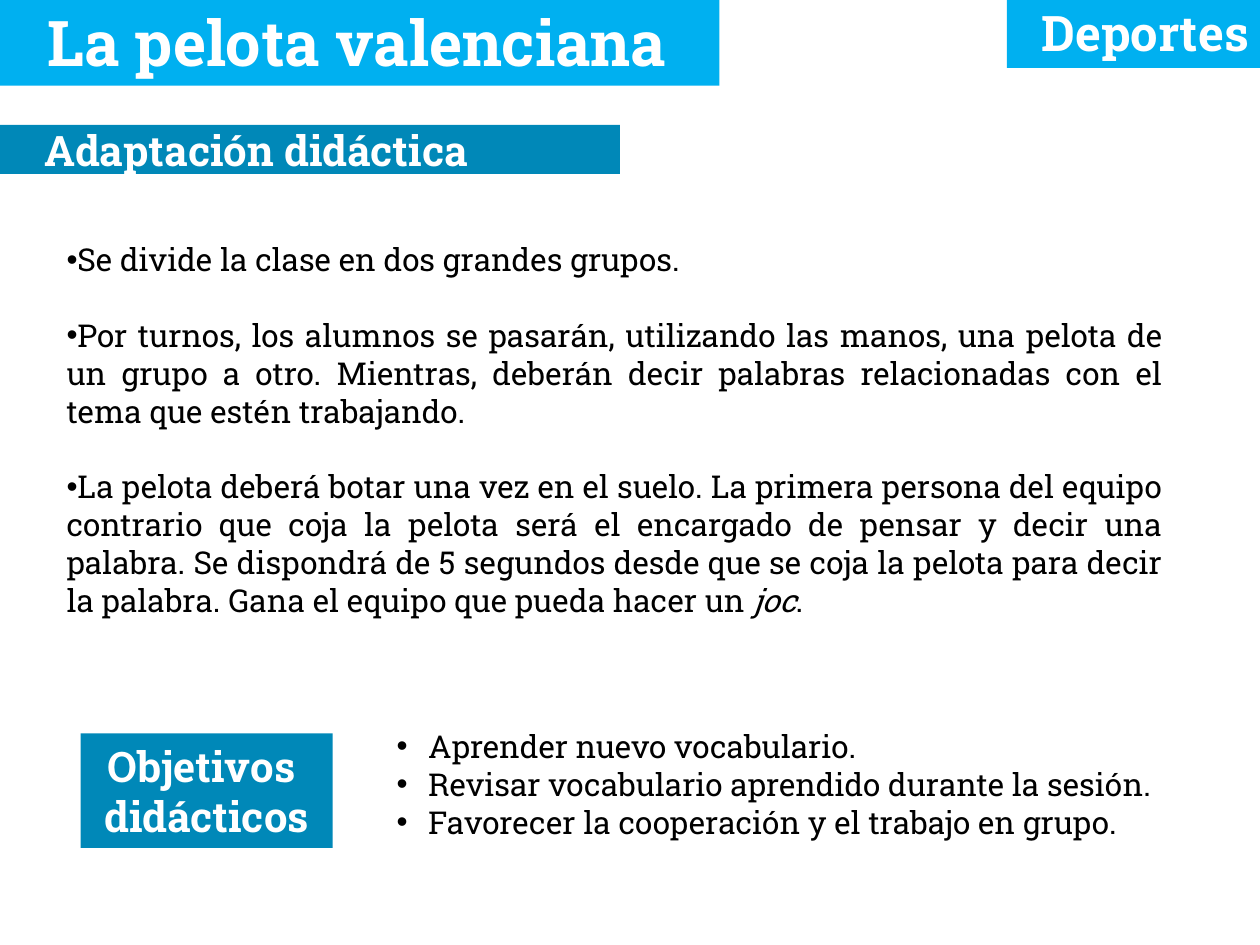
"""Build the slide on the classroom adaptation of Valencian pelota."""
from lxml.etree import SubElement
from pptx import Presentation
from pptx.dml.color import RGBColor
from pptx.enum.shapes import MSO_SHAPE
from pptx.enum.text import MSO_ANCHOR, PP_ALIGN
from pptx.oxml.ns import qn
from pptx.util import Inches, Pt

FONT = "Roboto Slab"
SKY = RGBColor(0x00, 0xB0, 0xF0)
BLUE = RGBColor(0x00, 0x88, 0xB8)
WHITE = RGBColor(0xFF, 0xFF, 0xFF)
BLACK = RGBColor(0x00, 0x00, 0x00)

BANNERS = [
    (["Objetivos ", "didácticos"], (0.64, 5.82, 2, 0.91), BLUE, 24, PP_ALIGN.CENTER, 0.1, False),
    (["Adaptación didáctica"], (0, 0.99, 4.92, 0.39), BLUE, 24, PP_ALIGN.LEFT, 0.35, True),
    (["Deportes"], (7.99, -0.03, 2.02, 0.57), SKY, 28, PP_ALIGN.RIGHT, 0.1, True),
    (["La pelota valenciana"], (-0.04, -0.03, 5.75, 0.71), SKY, 36, PP_ALIGN.CENTER, 0.1, True),
]
RULES = [
    [("Se divide la clase en dos grandes grupos.", False)],
    [("Por turnos, los alumnos se pasarán, utilizando las manos, una pelota de un grupo "
      "a otro. Mientras, deberán decir palabras relacionadas con el tema que estén "
      "trabajando.", False)],
    [("La pelota deberá botar una vez en el suelo. La primera persona del equipo contrario "
      "que coja la pelota será el encargado de pensar y decir una palabra. Se dispondrá de "
      "5 segundos desde que se coja la pelota para decir la palabra. Gana el equipo que "
      "pueda hacer un ", False), ("joc", True), (".", False)],
]
GOALS = [
    [("Aprender nuevo vocabulario.", False)],
    [("Revisar vocabulario aprendido durante la sesión.", False)],
    [("Favorecer la cooperación y el trabajo en grupo.", False)],
]


def style(span, size, color, bold=False, italic=False):
    span.font.name = FONT
    span.font.size = Pt(size)
    span.font.color.rgb = color
    span.font.bold = bold
    span.font.italic = italic


def add_banner(slide, lines, place, fill, size, align, inset, wrap):
    box = slide.shapes.add_shape(MSO_SHAPE.RECTANGLE, *map(Inches, place))
    box.shadow.inherit = False
    box.fill.solid()
    box.fill.fore_color.rgb = fill
    box.line.fill.background()
    frame = box.text_frame
    frame.word_wrap = wrap
    frame.margin_left = Inches(inset)
    frame.vertical_anchor = MSO_ANCHOR.MIDDLE
    frame.text = "\n".join(lines)
    for para in frame.paragraphs:
        para.alignment = align
        style(para.runs[0], size, WHITE, bold=True)


def add_bullets(slide, items, place, align, margin, hanging, gap):
    frame = slide.shapes.add_textbox(*map(Inches, place)).text_frame
    frame.word_wrap = True
    for index, spans in enumerate(items):
        para = frame.add_paragraph() if index else frame.paragraphs[0]
        para.alignment = align
        para.space_before = Pt(gap if index else 0)
        properties = para._p.get_or_add_pPr()
        properties.set("marL", str(Inches(margin)))
        properties.set("indent", str(-Inches(hanging)))
        SubElement(properties, qn("a:buFont"), typeface="Arial")
        SubElement(properties, qn("a:buChar"), char="•")
        for text, italic in spans:
            span = para.add_run()
            span.text = text
            style(span, 18, BLACK, italic=italic)


def main():
    deck = Presentation()
    deck.slide_width, deck.slide_height = Inches(10), Inches(7.5)
    slide = deck.slides.add_slide(deck.slide_layouts[6])
    for banner in BANNERS:
        add_banner(slide, *banner)
    add_bullets(slide, RULES, (0.43, 1.86, 8.9, 3.43), PP_ALIGN.JUSTIFY, 0, 0, 21.6)
    add_bullets(slide, GOALS, (2.8, 5.72, 7.01, 1.01), PP_ALIGN.LEFT, 0.5, 0.25, 0)
    deck.save("out.pptx")


if __name__ == "__main__":
    main()
